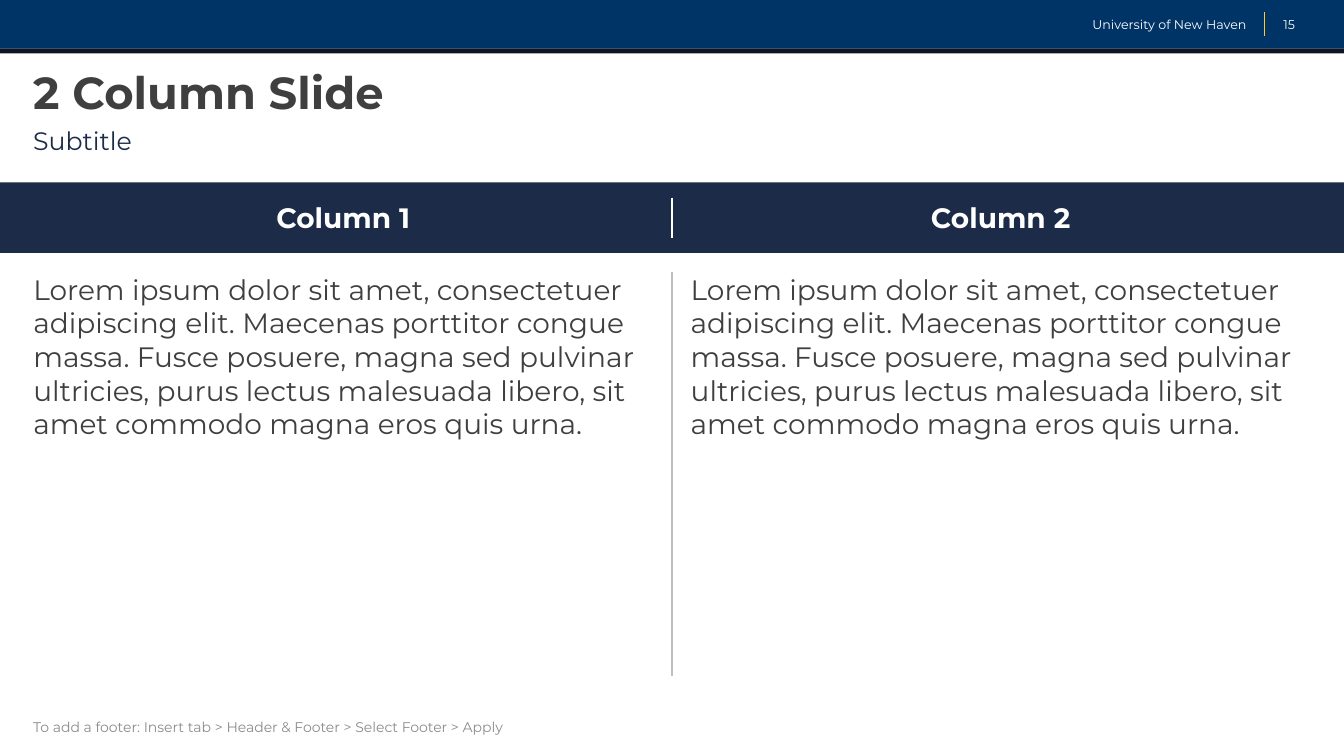
import dataclasses

import pptx
import pptx.dml.color
import pptx.enum.shapes
import pptx.enum.text
import pptx.oxml
import pptx.util

Inches = pptx.util.Inches
ALIGN = pptx.enum.text.PP_ALIGN
ANCHOR = pptx.enum.text.MSO_ANCHOR


@dataclasses.dataclass(frozen=True)
class Theme:
    """Colours, typeface and type sizes of the slide."""
    font: str = "Montserrat"
    blue: str = "003366"
    midnight: str = "0E1524"
    navy: str = "1C2B48"
    gold: str = "FFCC33"
    white: str = "FFFFFF"
    ink: str = "3F3F3F"
    muted: str = "8C8C8C"
    rule: str = "BFBFBF"
    title_size: int = 32
    column_size: int = 20
    subtitle_size: int = 18
    footer_size: int = 10
    header_size: int = 9
    rule_width: int = 1


THEME = Theme()
SLIDE_WIDTH, SLIDE_HEIGHT = 13.33, 7.5
MARGIN = 0.33
CONTENT_WIDTH = SLIDE_WIDTH - 2 * MARGIN
COLUMN_WIDTH = 6.15
LOREM = (
    "Lorem ipsum dolor sit amet, consectetuer",
    "adipiscing elit. Maecenas porttitor congue massa. Fusce posuere, "
    "magna sed pulvinar ultricies, purus lectus malesuada libero, sit "
    "amet commodo magna eros quis urna.",
)
COLUMNS = (("Column 1", LOREM), ("Column 2", LOREM))


def rgb(colour):
    """Turn a hex string into a colour."""
    return pptx.dml.color.RGBColor.from_string(colour)


def add_band(slide, box, colour):
    """Draw a plain filled rectangle in the box."""
    band = slide.shapes.add_shape(
        pptx.enum.shapes.MSO_SHAPE.RECTANGLE, *map(Inches, box))
    band.shadow.inherit = False
    band.fill.solid()
    band.fill.fore_color.rgb = rgb(colour)
    band.line.fill.background()


def add_rule(slide, x, top, height, colour):
    """Draw a vertical rule down from its top end."""
    rule = slide.shapes.add_connector(
        pptx.enum.shapes.MSO_CONNECTOR.STRAIGHT,
        Inches(x), Inches(top), Inches(x), Inches(top + height))
    rule.line.color.rgb = rgb(colour)
    rule.line.width = pptx.util.Pt(THEME.rule_width)
    rule._element.spPr.append(pptx.oxml.parse_xml(
        '<a:effectLst xmlns:a="http://schemas.openxmlformats.org/drawingml/2006/main"/>'))


def add_text(slide, box, lines, size, colour, bold=False,
             align=ALIGN.LEFT, anchor=ANCHOR.TOP, spacing=None):
    """Set one paragraph in the box, with a break between its lines."""
    frame = slide.shapes.add_textbox(*map(Inches, box)).text_frame
    frame.word_wrap = True
    frame.margin_left = frame.margin_right = 0
    frame.margin_top = frame.margin_bottom = 0
    frame.vertical_anchor = anchor
    paragraph = frame.paragraphs[0]
    paragraph.alignment = align
    paragraph.line_spacing = spacing
    for index, line in enumerate(lines):
        if index:
            paragraph.add_line_break()
        run = paragraph.add_run()
        run.text = line
        run.font.name = THEME.font
        run.font.size = pptx.util.Pt(size)
        run.font.bold = bold
        run.font.color.rgb = rgb(colour)


def add_header(slide, box, owner, number):
    """Place the top bar with its owner, gold rule and page number."""
    left, top, width, height = box
    right = left + width
    edge = 0.05
    add_band(slide, (left, top, width, height - edge), THEME.blue)
    add_band(slide, (left, top + height - edge, width, edge), THEME.midnight)
    add_text(slide, (right - 3.41, top + 0.17, 2.44, 0.14), [owner],
             THEME.header_size, THEME.white,
             align=ALIGN.RIGHT, anchor=ANCHOR.MIDDLE)
    add_rule(slide, right - 0.79, top + 0.12, 0.24, THEME.gold)
    add_text(slide, (right - 0.6, top + 0.17, 0.27, 0.14), [number],
             THEME.header_size, THEME.white, anchor=ANCHOR.MIDDLE)


def add_heading(slide, box, title, subtitle):
    """Place the title at the top of the box and the subtitle at its foot."""
    left, top, width, height = box
    subtitle_height = 0.35
    add_text(slide, (left, top, width, 0.49), [title], THEME.title_size,
             THEME.ink, bold=True, anchor=ANCHOR.MIDDLE, spacing=0.9)
    add_text(slide, (left, top + height - subtitle_height, width, subtitle_height),
             [subtitle], THEME.subtitle_size, THEME.navy, spacing=0.9)


def add_columns(slide, box, columns):
    """Place the navy label band and the text columns below it."""
    left, top, width, height = box
    band_height, label_height, tick_height = 0.7, 0.34, 0.4
    body_top = top + 0.89
    body_height = top + height - body_top
    center = left + width / 2
    pitch = (width - 2 * MARGIN - COLUMN_WIDTH) / (len(columns) - 1)
    add_band(slide, (left, top, width, band_height), THEME.navy)
    for index, (label, body) in enumerate(columns):
        x = left + MARGIN + index * pitch
        add_text(slide, (x, top + (band_height - label_height) / 2,
                         COLUMN_WIDTH, label_height),
                 [label], THEME.column_size, THEME.white,
                 bold=True, align=ALIGN.CENTER)
        add_text(slide, (x, body_top, COLUMN_WIDTH, body_height),
                 body, THEME.column_size, THEME.ink)
    add_rule(slide, center, body_top, body_height, THEME.rule)
    add_rule(slide, center, top + (band_height - tick_height) / 2,
             tick_height, THEME.white)


def add_footer(slide, box, note):
    """Place the footer note at the bottom of the box."""
    add_text(slide, box, [note], THEME.footer_size, THEME.muted,
             anchor=ANCHOR.BOTTOM)


def main():
    """Build the two-column slide and save it."""
    deck = pptx.Presentation()
    deck.slide_width = Inches(SLIDE_WIDTH)
    deck.slide_height = Inches(SLIDE_HEIGHT)
    slide = deck.slides.add_slide(deck.slide_layouts[6])
    add_header(slide, (0, 0, SLIDE_WIDTH, 0.53), "University of New Haven", "15")
    add_heading(slide, (MARGIN, 0.7, CONTENT_WIDTH, 0.93),
                "2 Column Slide", "Subtitle")
    add_columns(slide, (0, 1.81, SLIDE_WIDTH, 4.9), COLUMNS)
    add_footer(slide, (MARGIN, 6.9, CONTENT_WIDTH, 0.4),
               "To add a footer: Insert tab > Header & Footer > Select Footer > Apply")
    deck.save("out.pptx")


if __name__ == "__main__":
    main()
